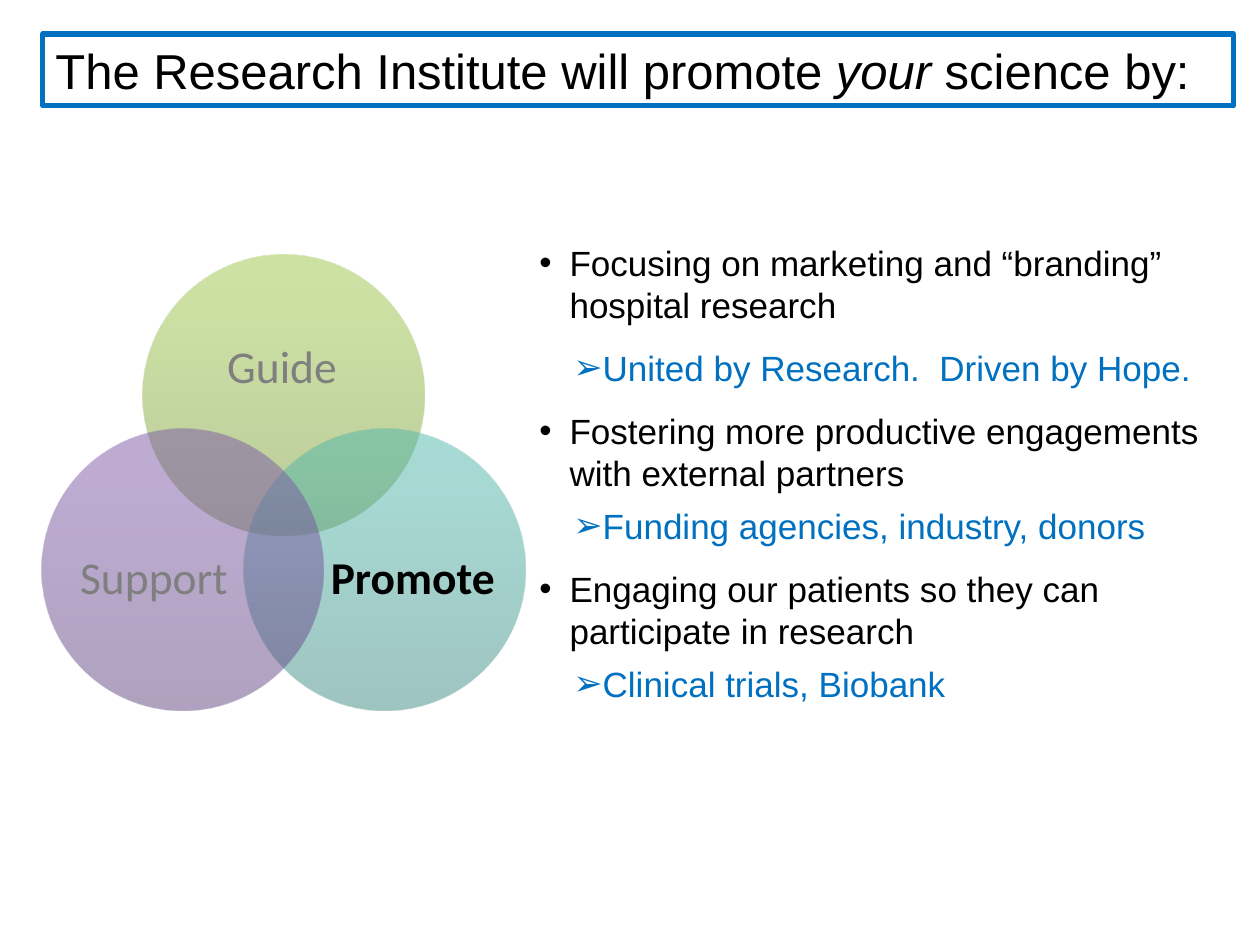
from dataclasses import dataclass

from lxml import etree
from pptx import Presentation
from pptx.dml.color import RGBColor
from pptx.enum.shapes import MSO_SHAPE
from pptx.enum.text import MSO_ANCHOR, MSO_AUTO_SIZE, PP_ALIGN
from pptx.oxml.ns import qn
from pptx.util import Inches, Pt

OVAL = MSO_SHAPE.OVAL
MIDDLE, TOP = MSO_ANCHOR.MIDDLE, MSO_ANCHOR.TOP
LEFT, CENTER = PP_ALIGN.LEFT, PP_ALIGN.CENTER
NO_FIT = MSO_AUTO_SIZE.NONE
TITLE_AND_CONTENT = 1


@dataclass(frozen=True)
class Theme:
    black: str = "000000"
    grey: str = "7F7F7F"
    blue: str = "0070C0"
    green_stops: tuple = ("779737", "9BC348", "9DC746")
    teal_stops: tuple = ("3D8B83", "50B5AA", "4EB8AC")
    purple_stops: tuple = ("5F4480", "7B58A6", "7C57A8")
    font: str = "Arial"
    label_font: str = "Calibri"
    title_size: int = 28
    label_size: int = 26
    body_size: int = 20


THEME = Theme()

TITLE_RUNS = [("The Research Institute will promote ", False),
              ("your", True), (" science by:", False)]

# text, level, space after in points
POINTS = [
    ("Focusing on marketing and “branding” hospital research", 0, 12),
    ("United by Research.  Driven by Hope.", 1, 12),
    ("Fostering more productive engagements with external partners", 0, 6),
    ("Funding agencies, industry, donors", 1, 12),
    ("Engaging our patients so they can participate in research", 0, 6),
    ("Clinical trials, Biobank", 1, 6),
]

# name, stops, circle offset and label box (both in circle diameters), active
CIRCLES = [
    ("Guide", THEME.green_stops, (0.36, 0), (0.13, 0.18, 0.73, 0.45), False),
    ("Promote", THEME.teal_stops, (0.72, 0.62), (0.3, 0.26, 0.6, 0.55), True),
    ("Support", THEME.purple_stops, (0, 0.62), (0.1, 0.26, 0.6, 0.55), False),
]


def add_run(p, text, size, color, font, bold=False, italic=False):
    r = p.add_run()
    r.text = text
    r.font.size, r.font.name = Pt(size), font
    r.font.bold, r.font.italic = bold, italic
    r.font.color.rgb = RGBColor.from_string(color)


def place(sp, box):
    sp.left, sp.top, sp.width, sp.height = (Inches(v) for v in box)


def fill_translucent_gradient(sp, colors):
    """Three half-transparent stops running from the bottom to the top."""
    sp.fill.gradient()
    sp.fill.gradient_angle = 90
    stops = sp._element.spPr.find(qn("a:gradFill")).find(qn("a:gsLst"))
    for old in list(stops):
        stops.remove(old)
    for position, color in zip((0, 80, 100), colors):
        gs = etree.SubElement(stops, qn("a:gs"), pos=str(position * 1000))
        clr = etree.SubElement(gs, qn("a:srgbClr"), val=color)
        etree.SubElement(clr, qn("a:alpha"), val="50000")


def set_bullet(p, char, margin, indent):
    pPr = p._p.get_or_add_pPr()
    pPr.set("marL", str(Inches(margin)))
    pPr.set("indent", str(Inches(indent)))
    etree.SubElement(pPr, qn("a:buFont"), typeface=THEME.font)
    etree.SubElement(pPr, qn("a:buChar"), char=char)


def build_title(sp, box):
    place(sp, box)
    sp.line.color.rgb = RGBColor.from_string(THEME.blue)
    sp.line.width = Pt(3)
    tf = sp.text_frame
    tf.auto_size, tf.vertical_anchor = NO_FIT, MIDDLE
    p = tf.paragraphs[0]
    p.alignment = LEFT
    for text, italic in TITLE_RUNS:
        add_run(p, text, THEME.title_size, THEME.black, THEME.font, italic=italic)


def build_points(sp, box):
    place(sp, box)
    tf = sp.text_frame
    tf.auto_size, tf.vertical_anchor = NO_FIT, TOP
    for i, (text, level, after) in enumerate(POINTS):
        p = tf.add_paragraph() if i else tf.paragraphs[0]
        p.level, p.line_spacing = level, 1.0
        p.space_before, p.space_after = Pt(0), Pt(after)
        if level:
            set_bullet(p, "➢", 0.5, -0.23)
        else:
            set_bullet(p, "•", 0.24, -0.24)
        add_run(p, text, THEME.body_size, THEME.blue if level else THEME.black,
                THEME.font)


def build_venn(s, left, top, width):
    """Three overlapping circles; their diameter follows from the width."""
    d = width / 1.72
    group = s.shapes.add_group_shape()
    for name, stops, (dx, dy), (lx, ly, lw, lh), active in CIRCLES:
        x, y = left + dx * d, top + dy * d
        sp = group.shapes.add_shape(OVAL, Inches(x), Inches(y), Inches(d), Inches(d))
        sp.shadow.inherit = False
        sp.line.fill.background()
        fill_translucent_gradient(sp, stops)

        label = group.shapes.add_textbox(Inches(x + lx * d), Inches(y + ly * d),
                                         Inches(lw * d), Inches(lh * d))
        tf = label.text_frame
        tf.word_wrap, tf.vertical_anchor = True, MIDDLE
        tf.margin_left = tf.margin_right = tf.margin_top = tf.margin_bottom = 0
        p = tf.paragraphs[0]
        p.alignment, p.line_spacing = CENTER, 0.9
        add_run(p, name, THEME.label_size, THEME.black if active else THEME.grey,
                THEME.label_font, bold=active)


def main():
    prs = Presentation()
    prs.slide_width, prs.slide_height = Inches(10), Inches(7.5)
    s = prs.slides.add_slide(prs.slide_layouts[TITLE_AND_CONTENT])
    build_venn(s, 0.33, 2.02, 3.84)
    build_title(s.shapes.title, (0.34, 0.27, 9.45, 0.57))
    build_points(s.placeholders[1], (4.18, 1.87, 5.62, 4.43))
    prs.save("out.pptx")


if __name__ == "__main__":
    main()
